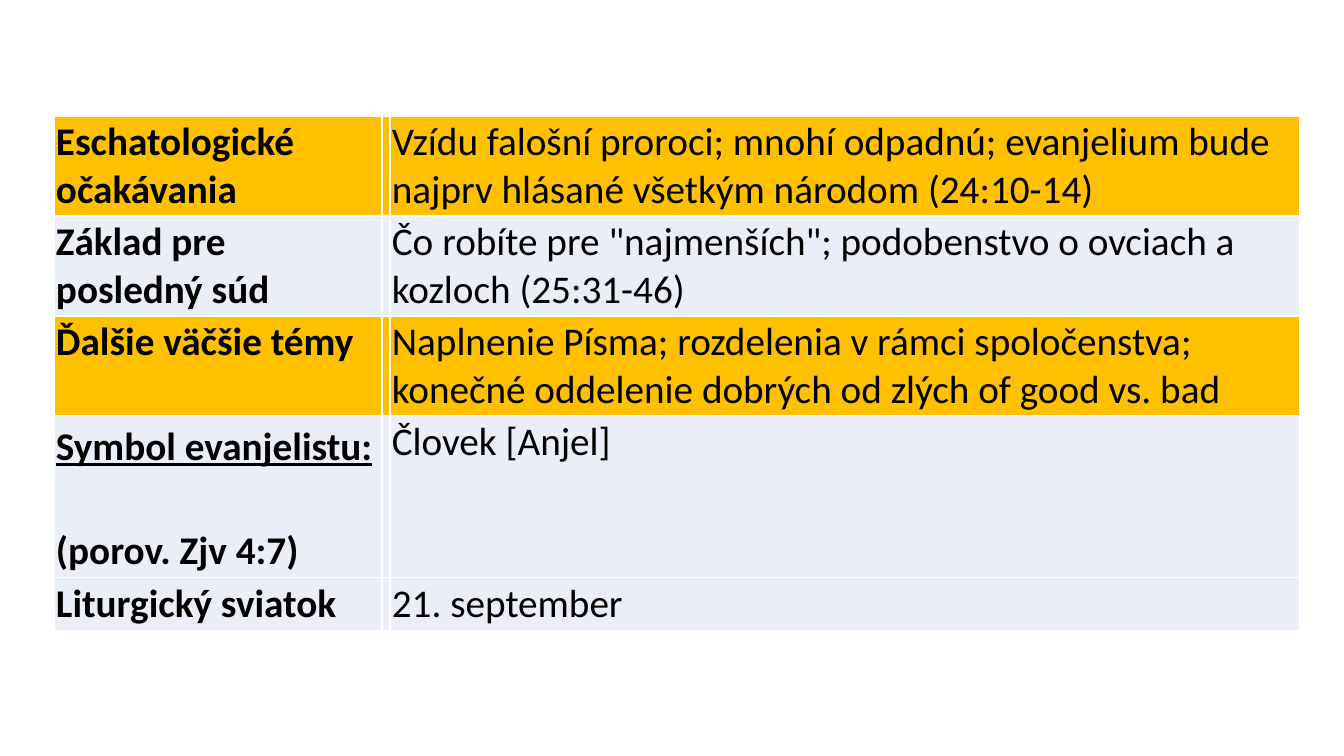
from lxml.etree import SubElement
from pptx import Presentation
from pptx.dml.color import RGBColor
from pptx.enum.text import MSO_ANCHOR
from pptx.oxml.ns import qn
from pptx.util import Pt

SCALE = 914400 / 100.8
GOLD, PALE, WHITE, BLACK = "FFC000", "EAEFF7", "FFFFFF", "000000"
WIDTHS = [328, 7, 910]
ROWS = [
    (100, GOLD, "Eschatologické očakávania",
     "Vzídu falošní proroci; mnohí odpadnú; evanjelium bude najprv hlásané všetkým národom (24:10-14)"),
    (100, PALE, "Základ pre posledný súd",
     'Čo robíte pre "najmenších"; podobenstvo o ovciach a kozloch (25:31-46)'),
    (100, GOLD, "Ďalšie väčšie témy",
     "Naplnenie Písma; rozdelenia v rámci spoločenstva; konečné oddelenie dobrých od zlých of good vs. bad"),
    (161, PALE, "", "Človek [Anjel]"),
    (53, PALE, "Liturgický sviatok", "21. september"),
]


def px(count):
    return round(count * SCALE)


def color(value):
    return RGBColor.from_string(value)


def write(para, text, size=28, bold=False, under=False):
    run = para.add_run()
    run.text = text
    font = run.font
    font.name = "Calibri"
    font.size = Pt(size)
    font.bold = bold
    font.underline = under
    font.color.rgb = color(BLACK)


def border(cell):
    props = cell._tc.get_or_add_tcPr()
    for side in ("lnL", "lnR", "lnT", "lnB"):
        line = SubElement(props, qn("a:" + side), w=str(Pt(1)))
        fill = SubElement(line, qn("a:solidFill"))
        SubElement(fill, qn("a:srgbClr"), val=WHITE)


def style(cell, fill):
    border(cell)
    cell.fill.solid()
    cell.fill.fore_color.rgb = color(fill)
    cell.margin_left = cell.margin_right = px(2)
    cell.margin_top = cell.margin_bottom = px(2)


def symbol(cell):
    frame = cell.text_frame
    first = frame.paragraphs[0]
    write(first, "Symbol evanjelistu:", bold=True, under=True)
    write(first, " ", size=32, bold=True)
    verse = frame.add_paragraph()
    verse.space_before = Pt(39)
    write(verse, "(porov. Zjv 4:7)", bold=True)


def grid(slide):
    height = sum(row[0] for row in ROWS)
    frame = slide.shapes.add_table(
        len(ROWS), len(WIDTHS), px(54), px(116), px(sum(WIDTHS)), px(height))
    table = frame.table
    table.first_row = table.horz_banding = False
    for column, width in zip(table.columns, WIDTHS):
        column.width = px(width)
    for row, (tall, fill, label, detail) in zip(table.rows, ROWS):
        row.height = px(tall)
        for cell in row.cells:
            style(cell, fill)
        left, _, right = row.cells
        if label:
            write(left.text_frame.paragraphs[0], label, bold=True)
        else:
            symbol(left)
        write(right.text_frame.paragraphs[0], detail)
    for cell in (left, right):
        cell.vertical_anchor = MSO_ANCHOR.MIDDLE


def main():
    deck = Presentation()
    deck.slide_width = px(1344)
    deck.slide_height = px(756)
    slide = deck.slides.add_slide(deck.slide_layouts[6])
    grid(slide)
    deck.save("out.pptx")


if __name__ == "__main__":
    main()
